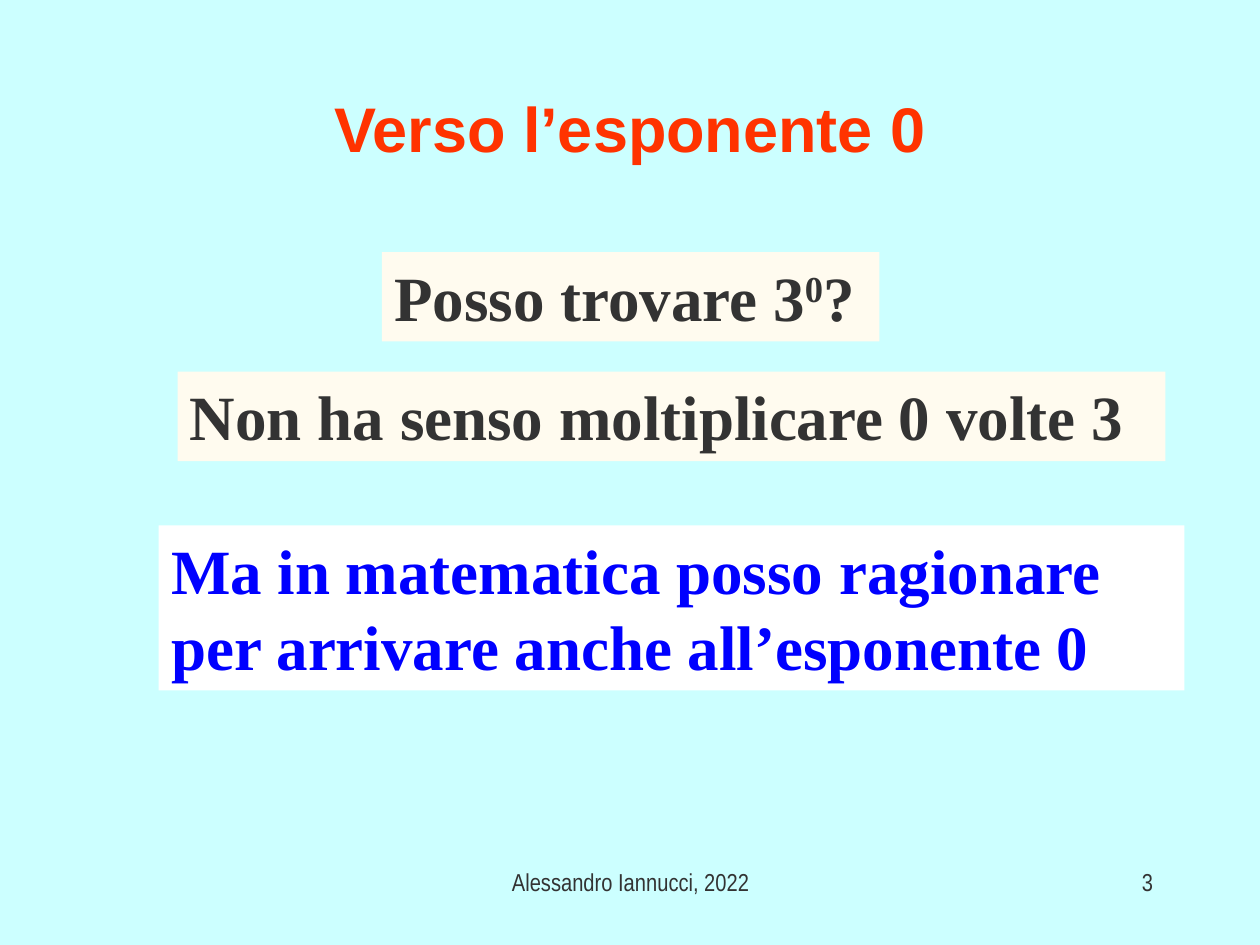
from pptx import Presentation
from pptx.dml.color import RGBColor
from pptx.enum.shapes import MSO_SHAPE
from pptx.enum.text import MSO_ANCHOR, MSO_AUTO_SIZE, PP_ALIGN
from pptx.util import Inches, Pt

COLORS = {
    "background": "CCFFFF",
    "title": "FF3300",
    "text": "333333",
    "conclusion": "0000FF",
    "cream": "FFFBEF",
    "white": "FFFFFF",
}


def color(name):
    return RGBColor.from_string(COLORS[name])


def format_paragraph(paragraph, font_name, size, color_name, bold, alignment):
    paragraph.alignment = alignment
    font = paragraph.font
    font.name, font.size, font.bold = font_name, Pt(size), bold
    font.color.rgb = color(color_name)


def set_title(slide, text, box):
    title = slide.shapes.title
    title.left, title.top, title.width, title.height = map(Inches, box)
    title.text_frame.text = text
    title.text_frame.vertical_anchor = MSO_ANCHOR.MIDDLE
    format_paragraph(title.text_frame.paragraphs[0], "Arial", 36, "title",
                     True, PP_ALIGN.CENTER)


def add_statement(slide, parts, box, fill_name, text_color):
    """Add a filled box; parts are (text, is_superscript) pairs."""
    shape = slide.shapes.add_shape(MSO_SHAPE.RECTANGLE, *map(Inches, box))
    shape.shadow.inherit = False
    shape.fill.solid()
    shape.fill.fore_color.rgb = color(fill_name)
    shape.line.fill.background()

    frame = shape.text_frame
    frame.word_wrap = True
    frame.auto_size = MSO_AUTO_SIZE.SHAPE_TO_FIT_TEXT
    frame.vertical_anchor = MSO_ANCHOR.TOP
    paragraph = frame.paragraphs[0]
    format_paragraph(paragraph, "Times New Roman", 36, text_color,
                     True, PP_ALIGN.LEFT)
    for text, is_superscript in parts:
        run = paragraph.add_run()
        run.text = text
        if is_superscript:
            run.font._element.set("baseline", "30000")


def add_footer(slide, text, left, width, alignment):
    text_box = slide.shapes.add_textbox(
        Inches(left), Inches(6.83), Inches(width), Inches(0.5))
    frame = text_box.text_frame
    frame.word_wrap = True
    frame.text = text
    format_paragraph(frame.paragraphs[0], "Arial Narrow", 14, "text",
                     False, alignment)


def main():
    presentation = Presentation()
    presentation.slide_width = Inches(10)
    presentation.slide_height = Inches(7.5)
    slide = presentation.slides.add_slide(presentation.slide_layouts[5])
    slide.background.fill.solid()
    slide.background.fill.fore_color.rgb = color("background")

    set_title(slide, "Verso l’esponente 0", (1.91, 0.53, 6.18, 0.96))

    # Question, objection and conclusion
    add_statement(slide,
                  [("Posso trovare 3", False), ("0", True), ("?", False)],
                  (3.03, 2, 3.95, 0.71), "cream", "text")
    add_statement(slide, [("Non ha senso moltiplicare 0 volte 3", False)],
                  (1.41, 2.95, 7.84, 0.71), "cream", "text")
    add_statement(slide,
                  [("Ma in matematica posso ragionare per arrivare "
                    "anche all’esponente 0", False)],
                  (1.26, 4.17, 8.14, 1.31), "white", "conclusion")

    # Author and slide number
    add_footer(slide, "Alessandro Iannucci, 2022", 3.42, 3.17, PP_ALIGN.CENTER)
    add_footer(slide, "3", 7.17, 2.08, PP_ALIGN.RIGHT)

    presentation.save("out.pptx")


if __name__ == "__main__":
    main()
